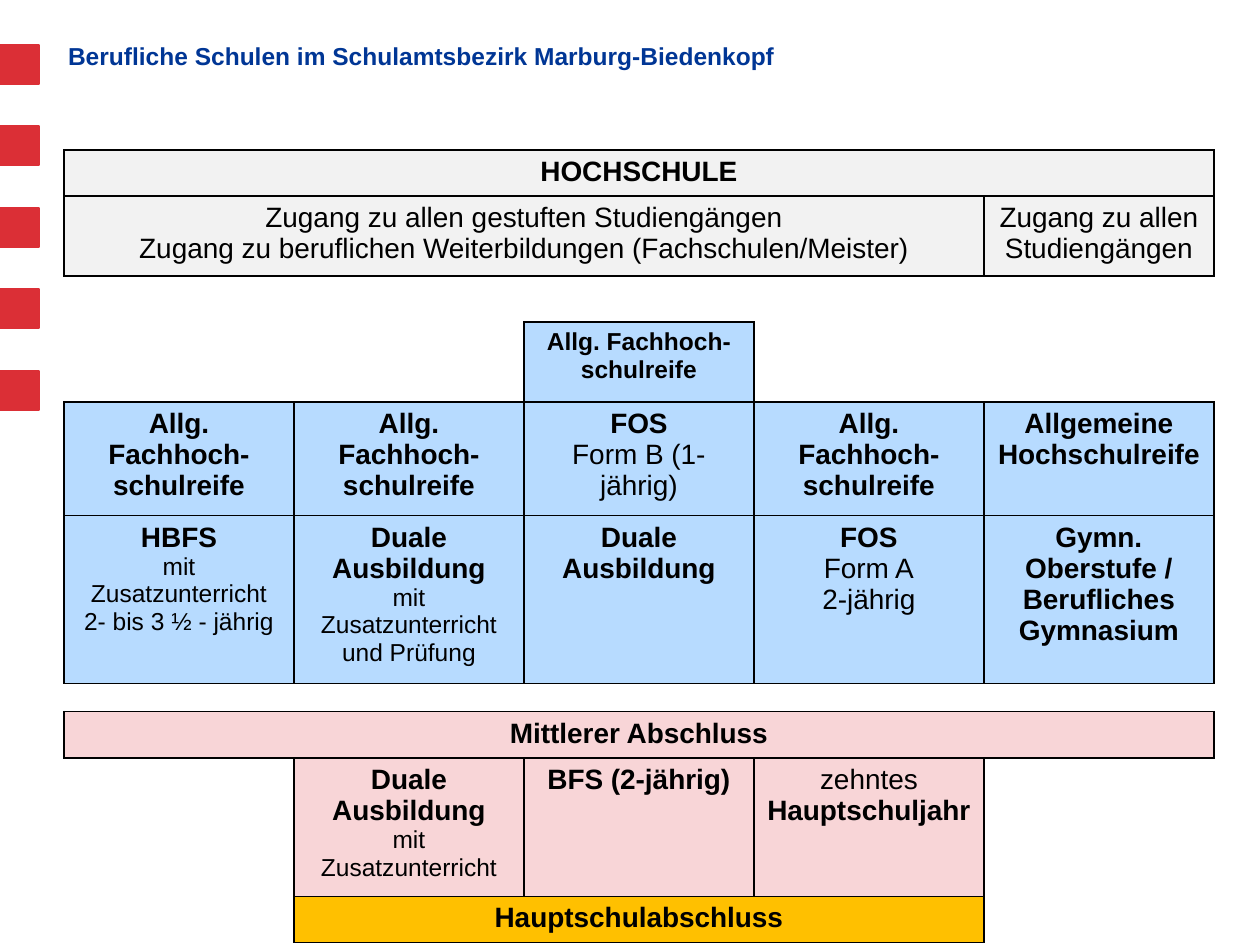
from dataclasses import dataclass
from itertools import product

from lxml import etree
from pptx import Presentation
from pptx.dml.color import RGBColor
from pptx.enum.shapes import MSO_SHAPE
from pptx.enum.text import MSO_AUTO_SIZE, PP_ALIGN
from pptx.oxml.ns import qn
from pptx.util import Pt

RECT = MSO_SHAPE.RECTANGLE
LEFT, CENTER = PP_ALIGN.LEFT, PP_ALIGN.CENTER
FIT_SHAPE = MSO_AUTO_SIZE.SHAPE_TO_FIT_TEXT
NO_STYLE = "{2D5ABB26-0587-4C30-8999-92F81FD0307C}"
EMU_PER_PX = 914400 / 126


@dataclass(frozen=True)
class Theme:
    font: str = "Arial"
    title: str = "003695"
    text: str = "000000"
    border: str = "000000"
    marker: str = "DB2F36"
    university: str = "F2F2F2"
    upper: str = "B7DBFF"
    middle: str = "F8D5D7"
    lower: str = "FFC000"
    large: int = 16
    small: int = 14
    empty: int = 6
    border_width: int = 1


T = Theme()


@dataclass(frozen=True)
class Run:
    text: str
    bold: bool = True
    size: int = T.large


@dataclass(frozen=True)
class Box:
    row: int
    col: int
    fill: str
    paragraphs: tuple[tuple[Run, ...], ...]
    span: int = 1


def bold(text: str, size: int = T.large) -> tuple[Run, ...]:
    return (Run(text, True, size),)


def plain(text: str, size: int = T.large) -> tuple[Run, ...]:
    return (Run(text, False, size),)


def small(text: str) -> tuple[Run, ...]:
    return plain(text, T.small)


FHR = "Allg. Fachhoch-schulreife"
DUAL = bold("Duale Ausbildung")
EXTRA = small("mit Zusatzunterricht")

COL_WIDTHS = [230] * 5
ROW_HEIGHTS = [46, 80, 46, 80, 113, 168, 28, 46, 138, 46]
BOXES = [
    Box(0, 0, T.university, (bold("HOCHSCHULE"),), 5),
    Box(1, 0, T.university, (
        plain("Zugang zu allen gestuften Studiengängen"),
        plain("Zugang zu beruflichen Weiterbildungen (Fachschulen/Meister)")), 4),
    Box(1, 4, T.university, (plain("Zugang zu allen Studiengängen"),)),
    Box(3, 2, T.upper, (bold(FHR, T.small),)),
    Box(4, 0, T.upper, (bold(FHR),)),
    Box(4, 1, T.upper, (bold(FHR),)),
    Box(4, 2, T.upper, (bold("FOS"), plain("Form B (1-jährig)"))),
    Box(4, 3, T.upper, (bold(FHR),)),
    Box(4, 4, T.upper, (bold("Allgemeine Hochschulreife"),)),
    Box(5, 0, T.upper, (bold("HBFS"), EXTRA, small("2- bis 3 ½ - jährig"))),
    Box(5, 1, T.upper, (DUAL, EXTRA, small("und Prüfung"))),
    Box(5, 2, T.upper, (DUAL,)),
    Box(5, 3, T.upper, (bold("FOS"), plain("Form A"), plain("2-jährig"))),
    Box(5, 4, T.upper, (bold("Gymn. Oberstufe / Berufliches Gymnasium"),)),
    Box(7, 0, T.middle, (bold("Mittlerer Abschluss"),), 5),
    Box(8, 1, T.middle, (DUAL, EXTRA)),
    Box(8, 2, T.middle, (bold("BFS (2-jährig)"),)),
    Box(8, 3, T.middle, (plain("zehntes ") + bold("Hauptschuljahr"),)),
    Box(9, 1, T.lower, (bold("Hauptschulabschluss"),), 3),
]


def px(n: int) -> int:
    return round(n * EMU_PER_PX)


def rgb(color: str) -> RGBColor:
    return RGBColor.from_string(color)


def write(tf, paragraphs, *, color=T.text, align=CENTER, line_spacing=None) -> None:
    for i, runs in enumerate(paragraphs):
        p = tf.add_paragraph() if i else tf.paragraphs[0]
        p.alignment = align
        if line_spacing:
            p.line_spacing = line_spacing
        for run in runs:
            r = p.add_run()
            r.text = run.text
            r.font.name = T.font
            r.font.size = Pt(run.size)
            r.font.bold = run.bold
            r.font.color.rgb = rgb(color)


def add_markers(s) -> None:
    """Five red squares, evenly spaced down the left edge."""
    for i in range(5):
        sp = s.shapes.add_shape(RECT, 0, px(45 + i * 326 // 4), px(39), px(39))
        sp.shadow.inherit = False
        sp.fill.solid()
        sp.fill.fore_color.rgb = rgb(T.marker)
        sp.line.color.rgb = rgb(T.marker)
        sp.line.width = Pt(0.75)


def add_title(s, text: str) -> None:
    tf = s.shapes.add_textbox(px(68), px(38), px(1012), px(39)).text_frame
    tf.word_wrap = True
    tf.auto_size = FIT_SHAPE
    tf.margin_left = tf.margin_right = 0
    tf.margin_top = tf.margin_bottom = px(6)
    write(tf, [bold(text, T.small)], color=T.title, align=LEFT, line_spacing=0.9)


def set_border(cell, side: str, visible: bool) -> None:
    ln = etree.SubElement(cell._tc.get_or_add_tcPr(), qn(f"a:ln{side}"),
                          w=str(Pt(T.border_width)))
    if visible:
        fill = etree.SubElement(ln, qn("a:solidFill"))
        etree.SubElement(fill, qn("a:srgbClr"), val=T.border)
    else:
        etree.SubElement(ln, qn("a:noFill"))


def add_school_table(s) -> None:
    tbl = s.shapes.add_table(len(ROW_HEIGHTS), len(COL_WIDTHS), px(64), px(150),
                             px(sum(COL_WIDTHS)), px(sum(ROW_HEIGHTS))).table
    tbl.first_row = tbl.horz_banding = False
    tbl._tbl.tblPr.find(qn("a:tableStyleId")).text = NO_STYLE
    for column, width in zip(tbl.columns, COL_WIDTHS):
        column.width = px(width)
    for row, height in zip(tbl.rows, ROW_HEIGHTS):
        row.height = px(height)

    # An edge shows wherever a filled cell lies on either side of it.
    filled = {(b.row, b.col + i) for b in BOXES for i in range(b.span)}
    for r, c in product(range(len(ROW_HEIGHTS)), range(len(COL_WIDTHS))):
        cell = tbl.cell(r, c)
        neighbours = {"L": (r, c - 1), "R": (r, c + 1), "T": (r - 1, c), "B": (r + 1, c)}
        for side, neighbour in neighbours.items():
            set_border(cell, side, (r, c) in filled or neighbour in filled)
        if (r, c) not in filled:
            cell.fill.background()
            etree.SubElement(cell.text_frame.paragraphs[0]._p, qn("a:endParaRPr"),
                             sz=str(T.empty * 100))

    for b in BOXES:
        cell = tbl.cell(b.row, b.col)
        if b.span > 1:
            cell.merge(tbl.cell(b.row, b.col + b.span - 1))
        for i in range(b.span):
            part = tbl.cell(b.row, b.col + i)
            part.fill.solid()
            part.fill.fore_color.rgb = rgb(b.fill)
        write(cell.text_frame, b.paragraphs)


def main() -> None:
    prs = Presentation()
    prs.slide_width, prs.slide_height = px(1260), px(945)
    s = prs.slides.add_slide(prs.slide_layouts[6])
    add_markers(s)
    add_title(s, "Berufliche Schulen im Schulamtsbezirk Marburg-Biedenkopf")
    add_school_table(s)
    prs.save("out.pptx")


if __name__ == "__main__":
    main()
